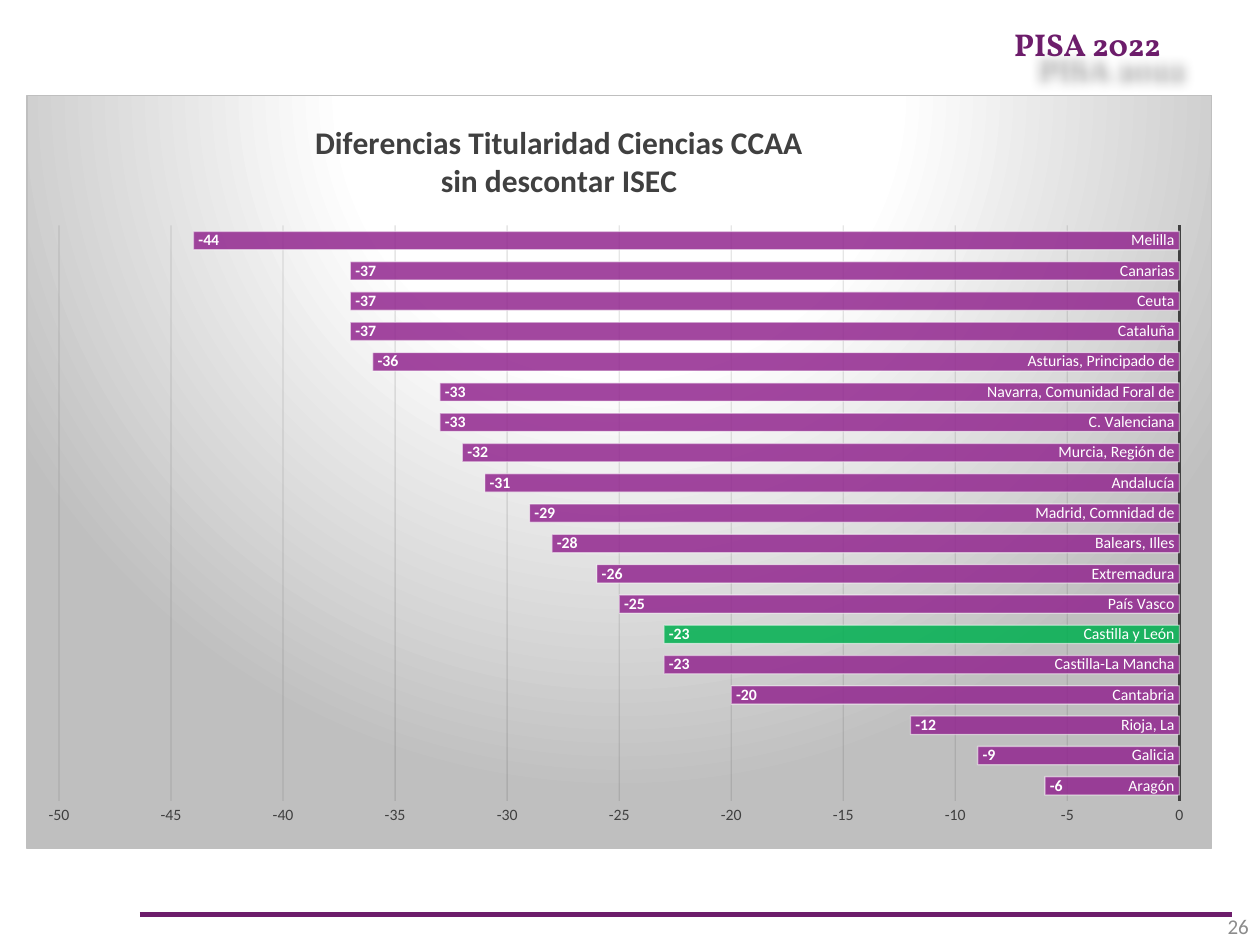
from lxml import etree
from pptx import Presentation
from pptx import util as u
from pptx.chart.data import CategoryChartData
from pptx.dml.color import RGBColor
from pptx.enum import chart as ch
from pptx.enum import shapes, text
from pptx.oxml import parse_xml
from pptx.oxml.ns import nsdecls, qn

PURPLE = RGBColor(0x6D, 0x1D, 0x6B)
BAR = RGBColor(0x92, 0x27, 0x8F)
HIGHLIGHT = RGBColor(0x00, 0xB0, 0x50)
WHITE = RGBColor(0xFF, 0xFF, 0xFF)
DARK = RGBColor(0x40, 0x40, 0x40)
GRID = RGBColor(0x0D, 0x0D, 0x0D)
GRAY = RGBColor(0x8C, 0x8C, 0x8C)

DIFFERENCES = [
    ("Aragón", -6), ("Galicia", -9), ("Rioja, La", -12), ("Cantabria", -20),
    ("Castilla-La Mancha", -23), ("Castilla y León", -23), ("País Vasco", -25),
    ("Extremadura", -26), ("Balears, Illes", -28), ("Madrid, Comnidad de", -29),
    ("Andalucía", -31), ("Murcia, Región de", -32), ("C. Valenciana", -33),
    ("Navarra, Comunidad Foral de", -33), ("Asturias, Principado de", -36),
    ("Cataluña", -37), ("Ceuta", -37), ("Canarias", -37), ("Melilla", -44),
]
HIGHLIGHTED = "Castilla y León"


def set_font(font, size, color, bold=False, name="Calibri"):
    font.name, font.size, font.bold = name, u.Pt(size), bold
    font.color.rgb = color


def set_alpha(parent, percent):
    """Make every plain colour inside the XML element partly transparent."""
    for color in parent.iter(qn("a:srgbClr")):
        etree.SubElement(color, qn("a:alpha")).set("val", str(percent * 1000))


def paint(chart_format, color):
    chart_format.fill.solid()
    chart_format.fill.fore_color.rgb = color
    set_alpha(chart_format.fill._xPr.find(qn("a:solidFill")), 85)
    chart_format.line.color.rgb = WHITE
    chart_format.line.width = u.Pt(0.75)
    set_alpha(chart_format.line._ln, 50)


def manual_layout(x, y, w=None, h=None):
    tags = [("xMode", "edge"), ("yMode", "edge"), ("x", x), ("y", y)]
    if w is not None:
        tags = [("layoutTarget", "inner")] + tags + [("w", w), ("h", h)]
    body = "".join(f'<c:{tag} val="{value}"/>' for tag, value in tags)
    return parse_xml(f'<c:layout {nsdecls("c")}><c:manualLayout>{body}'
                     '</c:manualLayout></c:layout>')


def set_layout(element, layout, index):
    for old in element.findall(qn("c:layout")):
        element.remove(old)
    element.insert(index, layout)


def add_background(chart):
    """Give the chart area its radial gradient and thin border."""
    stops = "".join(
        f'<a:gs pos="{position * 1000}"><a:srgbClr val="{color}"/></a:gs>'
        for position, color in [(0, "FFFFFF"), (39, "FFFFFF"), (100, "BFBFBF")])
    chart._chartSpace.find(qn("c:chart")).addnext(parse_xml(
        f'<c:spPr {nsdecls("c", "a")}><a:gradFill><a:gsLst>{stops}</a:gsLst>'
        '<a:path path="circle">'
        '<a:fillToRect l="50000" t="-80000" r="50000" b="180000"/></a:path>'
        '</a:gradFill><a:ln w="9525"><a:solidFill><a:srgbClr val="BFBFBF"/>'
        '</a:solidFill></a:ln></c:spPr>'))


def add_title(chart):
    frame = chart.chart_title.text_frame
    for index, line in enumerate(["Diferencias Titularidad Ciencias CCAA",
                                  "sin descontar ISEC"]):
        paragraph = frame.paragraphs[0] if index == 0 else frame.add_paragraph()
        run = paragraph.add_run()
        run.text = line
        set_font(run.font, 18, DARK, bold=True)
    set_layout(chart.chart_title._element, manual_layout(0.24, 0.03), 1)


def style_axes(chart):
    for axis, color in [(chart.category_axis, WHITE), (chart.value_axis, DARK)]:
        axis.major_tick_mark = axis.minor_tick_mark = ch.XL_TICK_MARK.NONE
        set_font(axis.tick_labels.font, 9, color)
    categories, values = chart.category_axis, chart.value_axis
    categories.format.line.color.rgb = DARK
    categories.format.line.width = u.Pt(1.5)
    values.minimum_scale, values.maximum_scale, values.major_unit = -50, 0, 5
    values.tick_labels.number_format = "0"
    values.tick_labels.number_format_is_linked = False
    values.format.line.fill.background()
    values.has_major_gridlines = True
    grid = values.major_gridlines.format.line
    grid.color.rgb = GRID
    grid.width = u.Pt(0.75)
    set_alpha(grid._ln, 10)


def style_bars(chart):
    plot = chart.plots[0]
    plot.gap_width = 65
    plot.vary_by_categories = False
    series = plot.series[0]
    series.invert_if_negative = False
    paint(series.format, BAR)
    names = [name for name, _ in DIFFERENCES]
    paint(series.points[names.index(HIGHLIGHTED)].format, HIGHLIGHT)
    labels = series.data_labels
    labels.show_value = True
    labels.position = ch.XL_LABEL_POSITION.INSIDE_END
    labels.number_format, labels.number_format_is_linked = "0", False
    set_font(labels.font, 9, WHITE, bold=True)


def add_differences_chart(slide, left, top, width, height):
    data = CategoryChartData(number_format="0")
    data.categories = [name for name, _ in DIFFERENCES]
    data.add_series("Diferencia", [value for _, value in DIFFERENCES])
    chart = slide.shapes.add_chart(ch.XL_CHART_TYPE.BAR_CLUSTERED,
                                   left, top, width, height, data).chart
    chart.has_legend = False
    chart.font.name, chart.font.size = "Calibri", u.Pt(10)
    add_background(chart)
    add_title(chart)
    style_axes(chart)
    style_bars(chart)
    plot_area = chart._chartSpace.find(qn("c:chart")).find(qn("c:plotArea"))
    set_layout(plot_area, manual_layout(0.027, 0.173, 0.946, 0.764), 0)


def add_label(slide, box, content, size, color, bold=False, name="Calibri"):
    shape = slide.shapes.add_textbox(*box)
    paragraph = shape.text_frame.paragraphs[0]
    run = paragraph.add_run()
    run.text = content
    set_font(run.font, size, color, bold, name)
    return shape


def add_header(slide, left, top, width, height):
    shape = add_label(slide, (left, top, width, height), "PISA 2022", 18,
                      PURPLE, True, "Vollkorn")
    shape._element.spPr.append(parse_xml(
        f'<a:effectLst {nsdecls("a")}><a:outerShdw blurRad="{u.Inches(0.1)}" '
        f'dist="{u.Inches(0.28)}" dir="2700000" algn="tl" rotWithShape="0">'
        '<a:srgbClr val="000000"><a:alpha val="40000"/></a:srgbClr>'
        '</a:outerShdw></a:effectLst>'))


def add_footer(slide, left, top, width, height):
    """Draw the rule, with the page number right-aligned below it."""
    line = slide.shapes.add_connector(shapes.MSO_CONNECTOR.STRAIGHT,
                                      left, top, left + width, top)
    line.line.color.rgb = PURPLE
    line.line.width = u.Pt(3)
    etree.SubElement(line._element.spPr, qn("a:effectLst"))
    number_width = u.Inches(2.25)
    number_left = left + width + u.Inches(0.23) - number_width
    number = add_label(slide, (number_left, top - u.Inches(0.11), number_width,
                               height), "26", 12, GRAY)
    number.text_frame.word_wrap = True
    number.text_frame.vertical_anchor = text.MSO_ANCHOR.MIDDLE
    number.text_frame.paragraphs[0].alignment = text.PP_ALIGN.RIGHT


def main():
    presentation = Presentation()
    presentation.slide_width = u.Inches(10)
    presentation.slide_height = u.Inches(7.5)
    slide = presentation.slides.add_slide(presentation.slide_layouts[6])
    add_header(slide, u.Inches(7.95), u.Inches(0.15), u.Inches(1.44), u.Inches(0.4))
    add_differences_chart(slide, u.Inches(0.21), u.Inches(0.75),
                          u.Inches(9.41), u.Inches(5.99))
    add_footer(slide, u.Inches(1.11), u.Inches(7.26), u.Inches(8.67), u.Inches(0.4))
    presentation.save("out.pptx")


if __name__ == "__main__":
    main()
